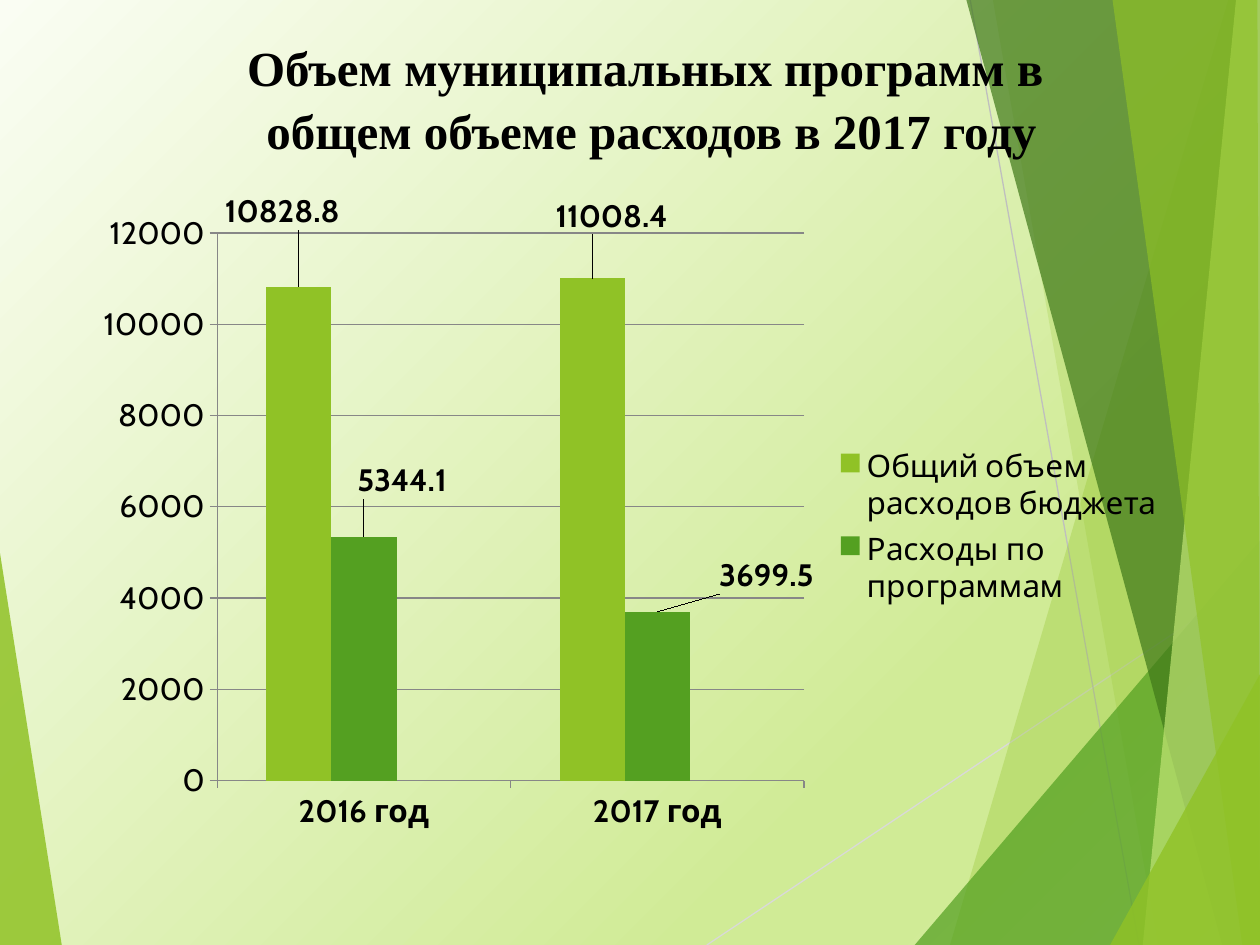
from lxml import etree
from pptx import Presentation
from pptx.chart.data import CategoryChartData
from pptx.dml.color import RGBColor
from pptx.enum.chart import XL_CHART_TYPE, XL_LEGEND_POSITION, XL_TICK_MARK
from pptx.enum.shapes import MSO_CONNECTOR
from pptx.enum.text import MSO_ANCHOR, MSO_AUTO_SIZE, PP_ALIGN
from pptx.oxml import parse_xml
from pptx.oxml.ns import qn
from pptx.util import Inches, Pt

COLUMN = XL_CHART_TYPE.COLUMN_CLUSTERED
OUT = XL_TICK_MARK.OUTSIDE
C_NS = "http://schemas.openxmlformats.org/drawingml/2006/chart"

TITLE = ["Объем муниципальных программ в ", "общем объеме расходов в 2017 году"]
CATS = ["2016 год", "2017 год"]
# name, values, colour, label shifts as shares of the chart
SERIES = [
    ("Общий объем расходов бюджета", (10828.8, 11008.4), "90C226",
     [(-0.015, -0.08), (0.018, -0.06)]),
    ("Расходы по программам", (5344.1, 3699.5), "54A021",
     [(0.035, -0.05), (0.1, -0.02)]),
    ("Series 3", (None, None), "E6B91E", []),
]
PLOT = (0.124, 0.048, 0.538, 0.853)
LEGEND = (0.685, 0.37, 0.31, 0.27)

STOPS = [(0, "FAFDF3"), (74, "D0EB96"), (83, "D0EB96"), (100, "DFF1B9")]
LINES = [((5.61, 7.5), (10, 4.57), "D9D9D9"), ((7.7, 0), (9.04, 7.5), "BFBFBF")]
LEFT = ([(0, 4.39), (0.49, 7.5), (0, 7.5)], "90C226", 85)
RIGHT = [
    ([(9.75, 0), (7.54, 7.5), (10, 7.5), (10, 0)], "90C226", 30),
    ([(7.88, 0), (9.19, 7.5), (10, 7.5), (10, 0)], "90C226", 20),
    ([(7.26, 7.5), (10, 4.29), (10, 7.5)], "54A021", 72),
    ([(7.67, 0), (9.7, 7.5), (10, 7.5), (10, 0)], "3F7819", 70),
    ([(9.81, 0), (9.07, 7.5), (10, 7.5), (10, 0)], "C0E474", 70),
    ([(8.83, 0), (9.86, 7.5), (10, 7.5), (9.98, 0)], "90C226", 65),
    ([(8.81, 7.5), (10, 5.35), (10, 7.5)], "90C226", 80),
]


def rgb(code):
    return RGBColor.from_string(code)


def paint_back(slide):
    fill = slide.background.fill
    fill.gradient()
    grad = slide.background._cSld.find(".//" + qn("a:gradFill"))
    stops = grad.find(qn("a:gsLst"))
    for stop in list(stops):
        stops.remove(stop)
    for pos, code in STOPS:
        stop = etree.SubElement(stops, qn("a:gs"), pos=str(pos * 1000))
        etree.SubElement(stop, qn("a:srgbClr"), val=code)
    lin = grad.find(qn("a:lin"))
    lin.set("ang", str(45 * 60000))
    lin.set("scaled", "0")


def add_facet(slide, points, code, alpha):
    """Draw a borderless polygon with the given opacity in percent."""
    points = [(Inches(x), Inches(y)) for x, y in points]
    pen = slide.shapes.build_freeform(*points[0])
    pen.add_line_segments(points[1:], close=True)
    facet = pen.convert_to_shape()
    facet.shadow.inherit = False
    facet.line.fill.background()
    facet.fill.solid()
    facet.fill.fore_color.rgb = rgb(code)
    color = facet._element.spPr.find(".//" + qn("a:srgbClr"))
    etree.SubElement(color, qn("a:alpha"), val=str(alpha * 1000))


def add_line(slide, start, end, code):
    ends = [Inches(v) for v in start + end]
    line = slide.shapes.add_connector(MSO_CONNECTOR.STRAIGHT, *ends)
    line.line.color.rgb = rgb(code)
    line.line.width = Pt(0.75)
    etree.SubElement(line._element.spPr, qn("a:effectLst"))


def set_title(slide):
    title = slide.shapes.title
    title.left, title.top, title.width, title.height = map(Inches, (0.67, 0.25, 9, 1.25))
    frame = title.text_frame
    frame.text = "\n".join(TITLE)
    frame.word_wrap = True
    frame.auto_size = MSO_AUTO_SIZE.NONE
    frame.vertical_anchor = MSO_ANCHOR.TOP
    for para in frame.paragraphs:
        para.alignment = PP_ALIGN.CENTER
        para.space_before = Pt(2)
        para.font.name, para.font.size, para.font.bold = "Times New Roman", Pt(28), True
        para.font.color.rgb = rgb("000000")
    slide.shapes._spTree.append(title._element)


def layout(modes, values):
    """Make a manual layout; values go to x, y, w, h in that order."""
    rows = "".join(f'<c:{m} val="{v}"/>' for m, v in modes)
    rows += "".join(f'<c:{k} val="{v}"/>' for k, v in zip("xywh", values))
    return parse_xml(f'<c:layout xmlns:c="{C_NS}"><c:manualLayout>{rows}'
                     '</c:manualLayout></c:layout>')


def place(part, box, index, target=()):
    for old in part.findall(qn("c:layout")):
        part.remove(old)
    part.insert(index, layout([*target, ("xMode", "edge"), ("yMode", "edge")], box))


def set_labels(series, shifts):
    labels = series.data_labels
    labels.show_value = True
    labels.font.bold = True
    for i, shift in enumerate(shifts):
        label = series.points[i].data_label
        label.font.bold = True
        label.font.size = Pt(18)
        label._dLbl.insert(1, layout([], shift))


def add_chart(slide):
    data = CategoryChartData()
    data.categories = CATS
    for name, values, *_ in SERIES:
        data.add_series(name, values)
    box = map(Inches, (0.65, 1.53, 8.66, 5.17))
    chart = slide.shapes.add_chart(COLUMN, *box, data).chart
    chart.has_title = False
    chart.font.name, chart.font.size = "Cabin", Pt(18)
    chart.font.color.rgb = rgb("000000")
    plot = chart.plots[0]
    plot.gap_width, plot.overlap, plot.vary_by_categories = 150, 0, False
    for series, (_, _, code, shifts) in zip(plot.series, SERIES):
        series.format.fill.solid()
        series.format.fill.fore_color.rgb = rgb(code)
        if shifts:
            set_labels(series, shifts)

    cat, val = chart.category_axis, chart.value_axis
    val.minimum_scale, val.maximum_scale, val.major_unit = 0, 12000, 2000
    val.has_major_gridlines = True
    cat.tick_labels.font.bold = True
    for axis in (cat, val):
        axis.major_tick_mark = OUT
    for part in (cat, val, val.major_gridlines):
        part.format.line.color.rgb = rgb("878787")
        part.format.line.width = Pt(0.75)

    chart.has_legend = True
    legend = chart.legend
    legend.position = XL_LEGEND_POSITION.RIGHT
    legend.include_in_layout = False
    entry = parse_xml(f'<c:legendEntry xmlns:c="{C_NS}"><c:idx val="2"/>'
                      '<c:delete val="1"/></c:legendEntry>')
    legend._element.insert(1, entry)
    place(legend._element, LEGEND, 2)
    area = chart._chartSpace.find(".//" + qn("c:plotArea"))
    place(area, PLOT, 0, [("layoutTarget", "inner")])


def main():
    deck = Presentation()
    deck.slide_width, deck.slide_height = Inches(10), Inches(7.5)
    slide = deck.slides.add_slide(deck.slide_layouts[5])
    paint_back(slide)
    add_facet(slide, *LEFT)
    for line in LINES:
        add_line(slide, *line)
    for facet in RIGHT:
        add_facet(slide, *facet)
    set_title(slide)
    add_chart(slide)
    deck.save("out.pptx")


if __name__ == "__main__":
    main()
